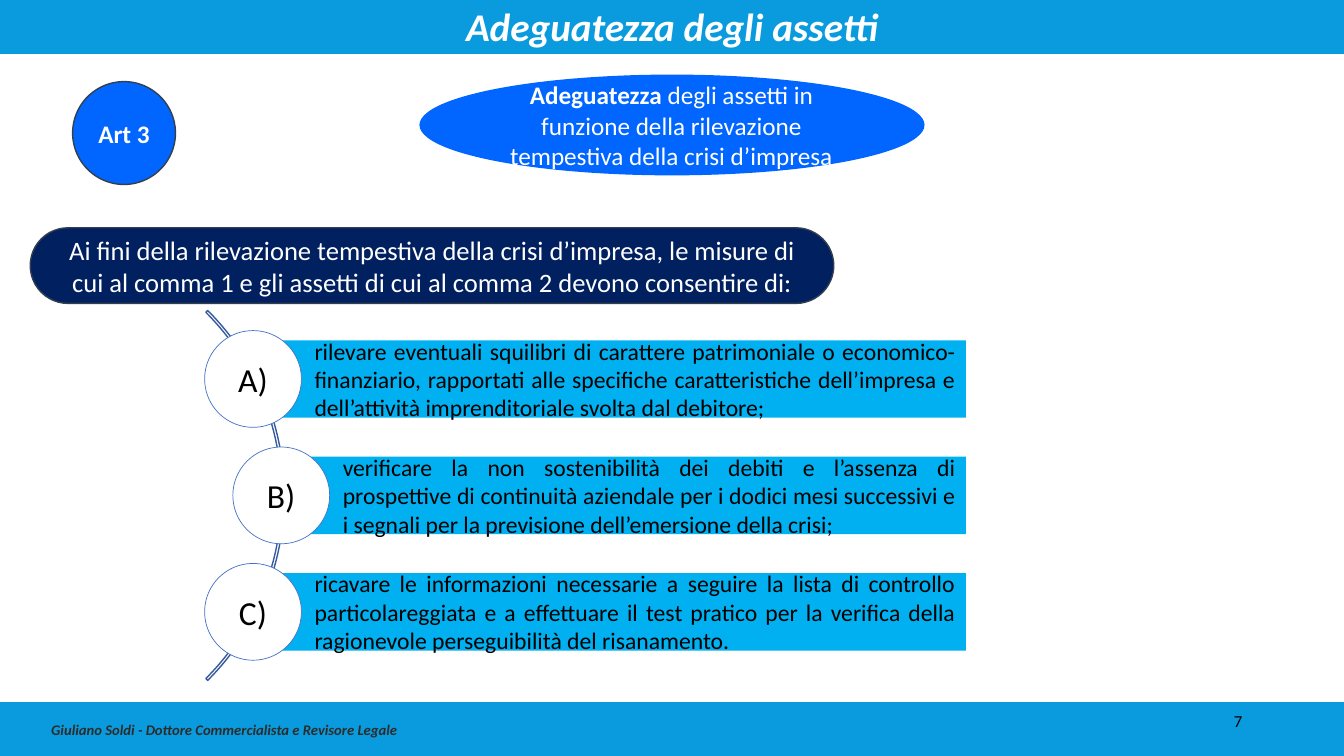
import pptx
import pptx.dml.color
import pptx.enum.shapes
import pptx.enum.text
import pptx.util

RGBColor = pptx.dml.color.RGBColor
Shape = pptx.enum.shapes.MSO_SHAPE
Align = pptx.enum.text.PP_ALIGN
Inches = pptx.util.Inches

WIDTH, HEIGHT = 13.33, 7.5
BAND_HEIGHT = 0.53
WHITE = RGBColor(0xFF, 0xFF, 0xFF)
BLACK = RGBColor(0x00, 0x00, 0x00)
CHARCOAL = RGBColor(0x2C, 0x2C, 0x2C)
SLATE = RGBColor(0x33, 0x3F, 0x50)
NAVY = RGBColor(0x00, 0x20, 0x60)
BAND_BLUE = RGBColor(0x09, 0x9B, 0xDD)
BRIGHT_BLUE = RGBColor(0x00, 0x66, 0xFF)
SKY_BLUE = RGBColor(0x00, 0xB0, 0xF0)
ARC_BLUE = RGBColor(0x36, 0x5B, 0x9D)
RING_BLUE = RGBColor(0x44, 0x72, 0xC4)

MEASURES = [
    ("A)", "rilevare eventuali squilibri di carattere patrimoniale o economico-finanziario, rapportati alle "
           "specifiche caratteristiche dell’impresa e dell’attività imprenditoriale svolta dal debitore;"),
    ("B)", "verificare la non sostenibilità dei debiti e l’assenza di prospettive di continuità aziendale per "
           "i dodici mesi successivi e i segnali per la previsione dell’emersione della crisi;"),
    ("C)", "ricavare le informazioni necessarie a seguire la lista di controllo particolareggiata e a "
           "effettuare il test pratico per la verifica della ragionevole perseguibilità del risanamento."),
]


def write(shape, spans, size, color, align=Align.CENTER, bold=False, italic=False):
    """Fill a shape with one paragraph made of the given spans."""
    frame = shape.text_frame
    frame.word_wrap = True
    frame.vertical_anchor = pptx.enum.text.MSO_ANCHOR.MIDDLE
    para = frame.paragraphs[0]
    para.alignment = align
    for text in spans:
        span = para.add_run()
        span.text = text
        span.font.name = "Calibri"
        span.font.size = pptx.util.Pt(size)
        span.font.color.rgb = color
        span.font.bold = bold
        span.font.italic = italic
    return para


def add_figure(page, kind, box, fill=None, line=None, weight=1):
    """Add a flat preset shape with optional fill and outline."""
    shape = page.shapes.add_shape(kind, *map(Inches, box))
    shape.shadow.inherit = False
    if fill is None:
        shape.fill.background()
    else:
        shape.fill.solid()
        shape.fill.fore_color.rgb = fill
    if line is None:
        shape.line.fill.background()
    else:
        shape.line.color.rgb = line
        shape.line.width = pptx.util.Pt(weight)
    return shape


def add_label(page, box, text, size, color, align, **style):
    """Add a text box holding a single line."""
    label = page.shapes.add_textbox(*map(Inches, box))
    write(label, [text], size, color, align, **style)


def add_header(page, box):
    """Draw the top band and the slide title."""
    left, top, width, height = box
    add_figure(page, Shape.RECTANGLE, box, BAND_BLUE, BAND_BLUE)
    add_label(page, (left, top - 0.03, width, height + 0.04), "Adeguatezza degli assetti",
              28, WHITE, Align.CENTER, bold=True, italic=True)


def add_footer(page, box):
    """Draw the bottom band with the author and the page number."""
    left, top, width, height = box
    add_figure(page, Shape.RECTANGLE, box, BAND_BLUE, BAND_BLUE)
    add_label(page, (left + 0.34, top + 0.07, 3.7, 0.4),
              "Giuliano Soldi - Dottore Commercialista e Revisore Legale",
              10.5, CHARCOAL, Align.RIGHT, bold=True, italic=True)
    add_label(page, (left + width - 3.91, top - 0.02, 3, 0.4), "7", 12, BLACK, Align.RIGHT)


def add_topic(page, box):
    """Draw the topic ellipse with its text area inside."""
    left, top, width, height = box
    add_figure(page, Shape.OVAL, box, BRIGHT_BLUE)
    inner = (left + 0.07, top + 0.03, width - 0.15, height - 0.06)
    topic = add_figure(page, Shape.OVAL, inner, BRIGHT_BLUE)
    frame = topic.text_frame
    frame.margin_left = frame.margin_right = frame.margin_top = frame.margin_bottom = Inches(0.02)
    para = write(topic, ["Adeguatezza", " degli assetti in funzione della rilevazione tempestiva "
                         "della crisi d’impresa"], 18, WHITE)
    para.runs[0].font.bold = True


def add_article(page, box):
    """Draw the round article badge."""
    badge = add_figure(page, Shape.OVAL, box, BRIGHT_BLUE, SLATE)
    write(badge, ["Art 3"], 18, WHITE, bold=True)


def add_premise(page, box):
    """Draw the pill that introduces the measures."""
    pill = add_figure(page, Shape.ROUNDED_RECTANGLE, box, NAVY, SLATE)
    pill.adjustments[0] = 0.5
    write(pill, ["Ai fini della rilevazione tempestiva della crisi d’impresa, le misure di cui al comma 1 "
                 "e gli assetti di cui al comma 2 devono consentire di:"], 19, WHITE)


def add_measures(page, box):
    """Draw the lettered measures along a thin arc."""
    left, top, width, height = box
    ring, arc_size, bulge = 0.96, 5.19, 0.28
    bar_height = 0.8 * ring
    pitch = (height - ring) / (len(MEASURES) - 1)
    arc_box = (left - 4.4, top + (height - arc_size) / 2, arc_size, arc_size)
    arc = add_figure(page, Shape.BLOCK_ARC, arc_box, line=ARC_BLUE)
    for index, value in enumerate((189, 27, 0.005)):
        arc.adjustments[index] = value
    for row, (letter, text) in enumerate(MEASURES):
        ring_left = left + bulge * (row % 2)
        ring_top = top + row * pitch
        bar_left = ring_left + ring / 2
        bar_box = (bar_left, ring_top + (ring - bar_height) / 2, left + width - bar_left, bar_height)
        bar = add_figure(page, Shape.RECTANGLE, bar_box, SKY_BLUE)
        frame = bar.text_frame
        frame.margin_left = Inches(0.61)
        frame.margin_right = frame.margin_top = frame.margin_bottom = Inches(0.1)
        write(bar, [text], 16.9, BLACK, Align.JUSTIFY)
        circle = add_figure(page, Shape.OVAL, (ring_left, ring_top, ring, ring), WHITE, RING_BLUE, 0.5)
        write(circle, [letter], 24, BLACK)


def main():
    """Build the slide and save the deck."""
    deck = pptx.Presentation()
    deck.slide_width, deck.slide_height = Inches(WIDTH), Inches(HEIGHT)
    page = deck.slides.add_slide(deck.slide_layouts[6])
    add_header(page, (0, 0, WIDTH, BAND_HEIGHT))
    add_footer(page, (0, HEIGHT - BAND_HEIGHT, WIDTH, BAND_HEIGHT))
    add_topic(page, (4.16, 0.74, 5.01, 1))
    add_premise(page, (0.3, 2.26, 7.97, 0.75))
    add_measures(page, (2.03, 3.28, 7.55, 3.27))
    add_article(page, (0.72, 0.81, 1.02, 1.02))
    deck.save("out.pptx")


if __name__ == "__main__":
    main()
